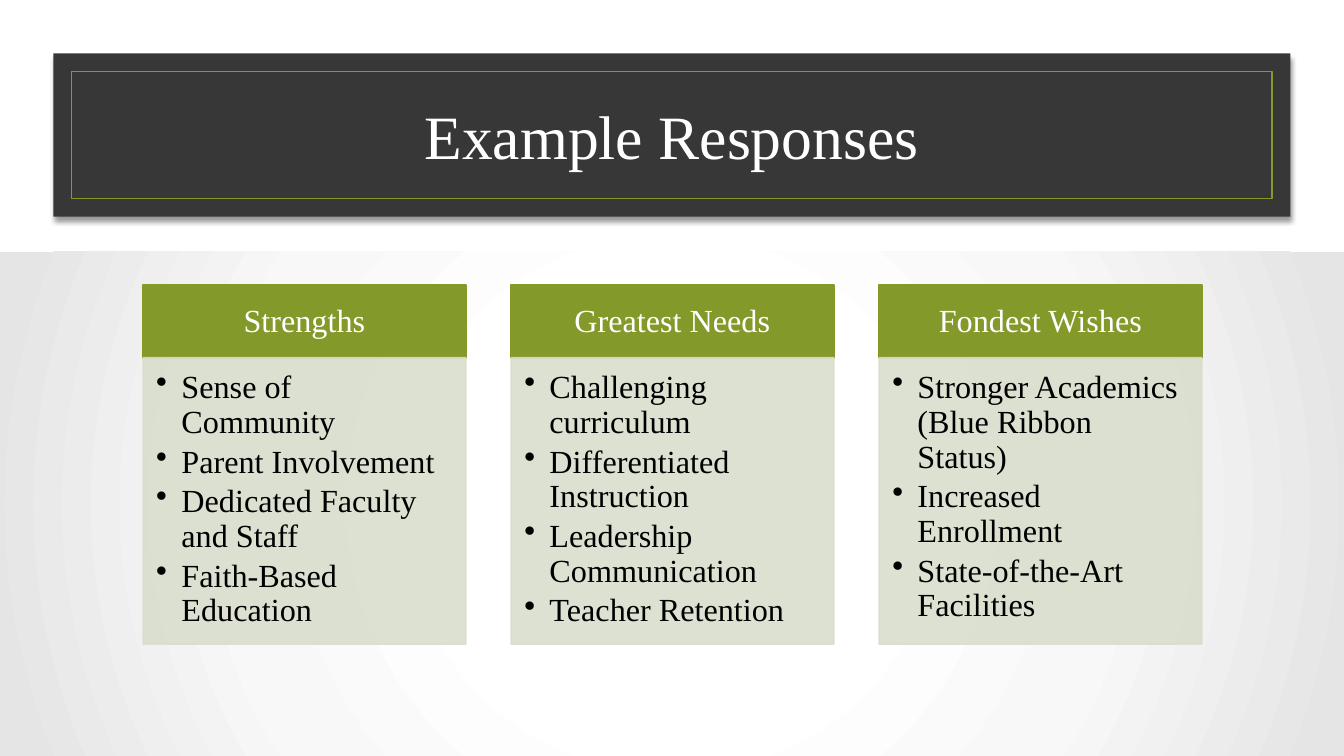
from lxml import etree
from pptx import Presentation
from pptx.dml.color import RGBColor
from pptx.enum.shapes import MSO_SHAPE
from pptx.enum.text import MSO_ANCHOR, PP_ALIGN
from pptx.oxml import parse_xml
from pptx.oxml.ns import nsdecls, qn
from pptx.util import Inches, Pt

RECTANGLE = MSO_SHAPE.RECTANGLE
TOP, MIDDLE = MSO_ANCHOR.TOP, MSO_ANCHOR.MIDDLE
CENTER, LEFT = PP_ALIGN.CENTER, PP_ALIGN.LEFT
FONT = "Times New Roman"
WHITE, BLACK, DARK, GREEN, PALE = "FFFFFF", "000000", "373737", "83992A", "D9DECD"
GLOW_STOPS = [(0, "FFFFFF"), (30, "FFFFFF"), (61, "F8F8F8"), (97, "E5E5E5")]
COLUMNS = [
    ("Strengths", ["Sense of Community", "Parent Involvement",
                   "Dedicated Faculty and Staff", "Faith-Based Education"]),
    ("Greatest Needs", ["Challenging curriculum", "Differentiated Instruction",
                        "Leadership Communication", "Teacher Retention"]),
    ("Fondest Wishes", ["Stronger Academics (Blue Ribbon Status)",
                        "Increased Enrollment", "State-of-the-Art Facilities"]),
]


def color(value):
    """Turn a hex string into a colour."""
    return RGBColor.from_string(value)


def add_box(slide, left, top, width, height, fill=None, line=None, opacity=100):
    """Add a flat rectangle with optional fill, outline and opacity."""
    shape = slide.shapes.add_shape(
        RECTANGLE, Inches(left), Inches(top), Inches(width), Inches(height))
    shape.shadow.inherit = False
    if fill:
        shape.fill.solid()
        shape.fill.fore_color.rgb = color(fill)
    else:
        shape.fill.background()
    if line:
        shape.line.color.rgb = color(line)
        shape.line.width = Pt(1.25)
    else:
        shape.line.fill.background()
    if opacity < 100:
        for element in shape._element.spPr.iter(qn("a:srgbClr")):
            etree.SubElement(element, qn("a:alpha"), val=str(opacity * 1000))
    return shape


def set_text(shape, lines, size, text_color, insets, anchor=MIDDLE,
             align=CENTER, spacing=None, after=0, bullet=None):
    """Write one paragraph per line into a shape."""
    frame = shape.text_frame
    frame.word_wrap = True
    frame.vertical_anchor = anchor
    (frame.margin_left, frame.margin_top,
     frame.margin_right, frame.margin_bottom) = map(Inches, insets)
    for index, line in enumerate(lines):
        paragraph = frame.add_paragraph() if index else frame.paragraphs[0]
        paragraph.alignment = align
        paragraph.line_spacing = spacing
        paragraph.space_after = Pt(after)
        if bullet:
            properties = paragraph._p.get_or_add_pPr()
            properties.set("marL", str(Inches(0.25)))
            properties.set("indent", str(-Inches(0.25)))
            etree.SubElement(properties, qn("a:buChar"), char=bullet)
        run = paragraph.add_run()
        run.text = line
        run.font.name = FONT
        run.font.size = Pt(size)
        run.font.color.rgb = color(text_color)


def add_banner(slide, left, top, width, height):
    """Add the dark title band with its shadow and thin inner frame."""
    band = add_box(slide, left, top, width, height, DARK)
    effects = band._element.spPr.find(qn("a:effectLst"))
    effects.append(parse_xml(
        f'<a:outerShdw {nsdecls("a")} blurRad="{Pt(4)}" dist="{Pt(3)}" '
        'dir="5400000" algn="t" rotWithShape="0"><a:srgbClr val="000000">'
        '<a:alpha val="40000"/></a:srgbClr></a:outerShdw>'))
    set_text(band, ["Example Responses"], 44, WHITE, (0.45, 0.05, 0.45, 0.05))
    inset = 0.18
    add_box(slide, left + inset, top + inset,
            width - 2 * inset, height - 2 * inset, line=GREEN)


def add_glow(slide, left, top, width, height):
    """Add the panel that fades from a white centre to grey edges."""
    panel = add_box(slide, left, top, width, height, WHITE)
    stops = "".join(f'<a:gs pos="{position * 1000}"><a:srgbClr val="{value}"/></a:gs>'
                    for position, value in GLOW_STOPS)
    gradient = parse_xml(
        f'<a:gradFill {nsdecls("a")} rotWithShape="1"><a:gsLst>{stops}</a:gsLst>'
        '<a:path path="circle"><a:fillToRect l="50000" t="50000" r="50000" b="50000"/>'
        '</a:path></a:gradFill>')
    properties = panel._element.spPr
    properties.replace(properties.find(qn("a:solidFill")), gradient)


def add_column(slide, left, top, width, height, heading, items):
    """Add a green heading above a pale bulleted panel."""
    heading_height = 0.72
    header = add_box(slide, left, top, width, heading_height, GREEN, GREEN)
    set_text(header, [heading], 23, WHITE, (0.18, 0.1, 0.18, 0.1), spacing=0.9)
    body = add_box(slide, left, top + heading_height, width,
                   height - heading_height, PALE, PALE, opacity=90)
    set_text(body, items, 23, BLACK, (0.13, 0.13, 0.18, 0.2), TOP, LEFT,
             spacing=0.9, after=3.45, bullet="•")


def add_columns(slide, left, top, width, height):
    """Spread the response columns evenly across a box."""
    column_width = 3.2
    step = (width - column_width) / (len(COLUMNS) - 1)
    for index, (heading, items) in enumerate(COLUMNS):
        add_column(slide, left + index * step, top, column_width, height, heading, items)


def main():
    """Build and save the slide."""
    presentation = Presentation()
    presentation.slide_width = Inches(13.33)
    presentation.slide_height = Inches(7.5)
    slide = presentation.slides.add_slide(presentation.slide_layouts[6])
    add_banner(slide, 0.53, 0.53, 12.27, 1.62)
    add_glow(slide, 0, 2.5, 13.33, 5)
    add_columns(slide, 1.42, 2.83, 10.5, 3.56)
    presentation.save("out.pptx")


if __name__ == "__main__":
    main()
